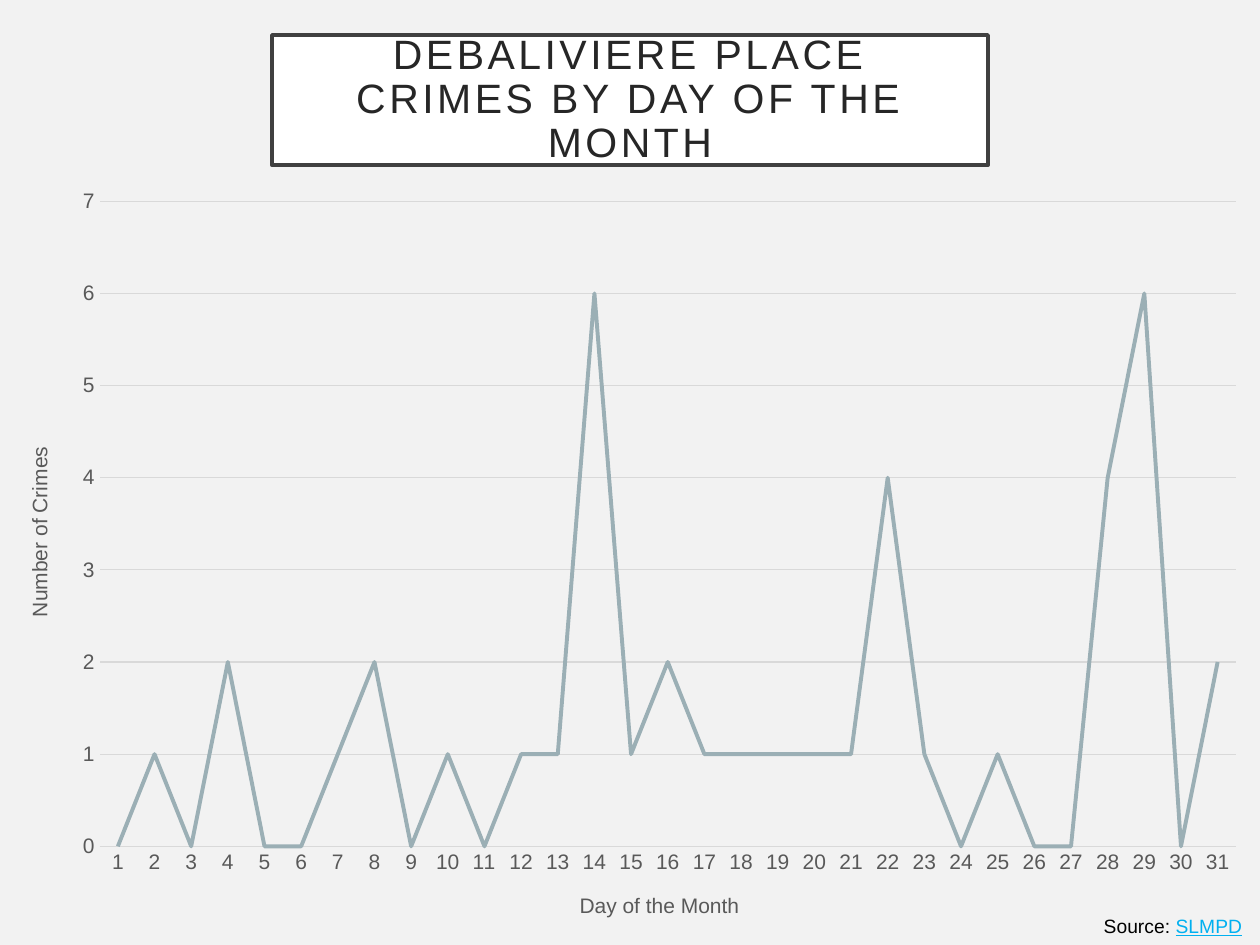
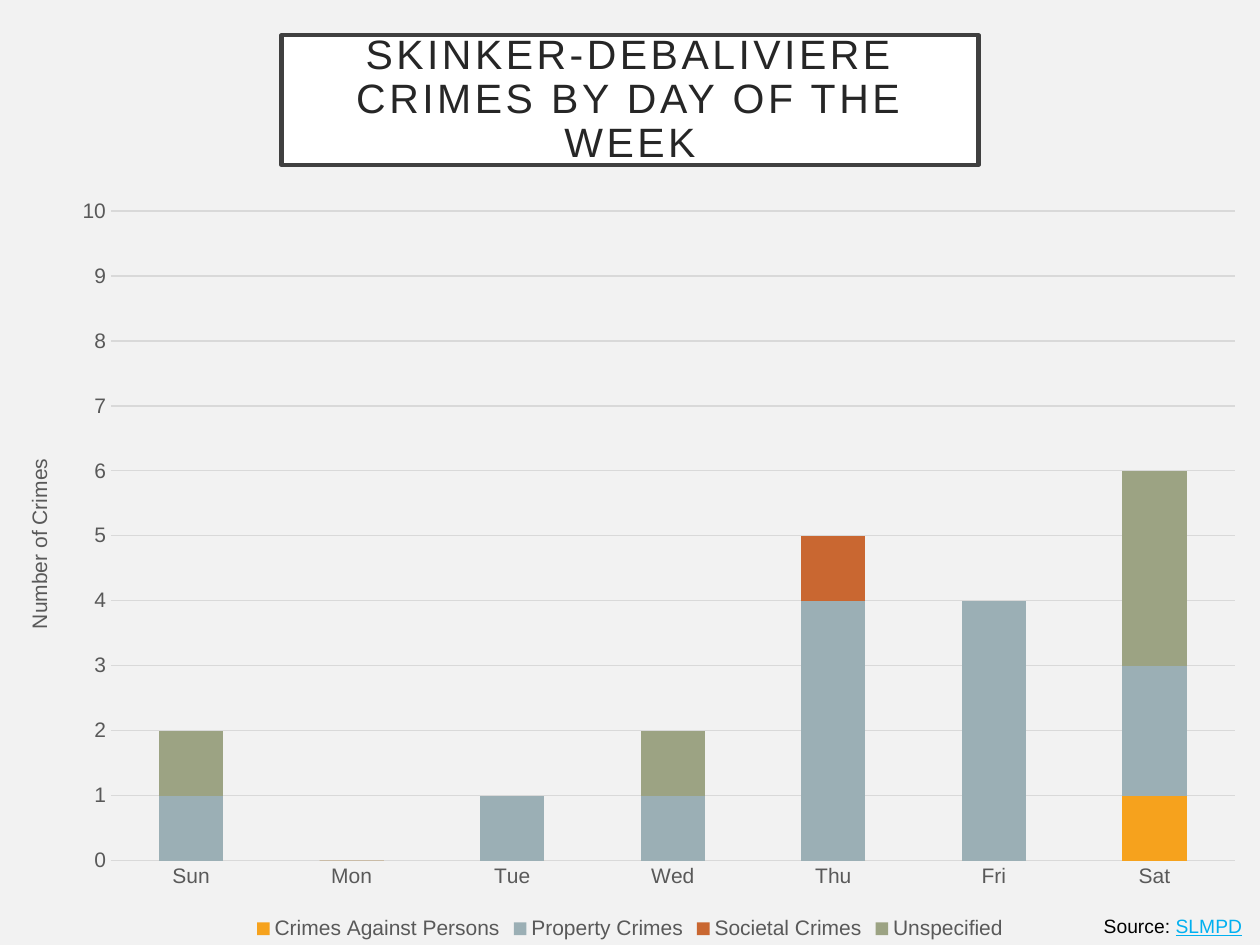
from lxml import etree
from pptx import Presentation
from pptx.chart.data import CategoryChartData
from pptx.dml.color import RGBColor
from pptx.enum.chart import XL_CHART_TYPE as ChartType
from pptx.enum.chart import XL_LEGEND_POSITION as LegendPosition
from pptx.enum.chart import XL_TICK_MARK as TickMark
from pptx.enum.text import MSO_ANCHOR as Anchor
from pptx.enum.text import MSO_AUTO_SIZE as AutoSize
from pptx.enum.text import PP_ALIGN as Align
from pptx.oxml import parse_xml
from pptx.oxml.ns import nsdecls, qn
from pptx.util import Inches, Pt

# Shared style; the grid has 100 columns and 75 rows of a tenth of an inch
COLUMNS, ROWS = 100, 75
CELL = 0.1
FONT = "Arial"
PAPER, WHITE, BLACK = "F2F2F2", "FFFFFF", "000000"
FRAME, HEADING, LABEL = "404040", "262626", "595959"
RULE, LINK = "D9D9D9", "00B0F0"
ORANGE, STEEL, RUST, OLIVE = "F6A21D", "9BAFB5", "C96731", "9CA383"
TITLE_LAYOUT = 5


def grid(cells):
    return Inches(cells * CELL)


def rgb(code):
    return RGBColor.from_string(code)


class CrimeDeck:
    def __init__(self):
        self.deck = Presentation()
        self.deck.slide_width = grid(COLUMNS)
        self.deck.slide_height = grid(ROWS)
        self.slide = None

    def style(self, font, size, color):
        font.name, font.size, font.bold = FONT, Pt(size), False
        font.color.rgb = rgb(color)

    def outline(self, line, color, width):
        line.color.rgb = rgb(color)
        line.width = Pt(width)

    def new_slide(self):
        self.slide = self.deck.slides.add_slide(self.deck.slide_layouts[TITLE_LAYOUT])
        self.slide.background.fill.solid()
        self.slide.background.fill.fore_color.rgb = rgb(PAPER)

    def title(self, place, subject, width):
        heading = self.slide.shapes.title
        heading.left, heading.top = grid((COLUMNS - width) / 2), grid(2.8)
        heading.width, heading.height = grid(width), grid(10.3)
        heading.fill.solid()
        heading.fill.fore_color.rgb = rgb(WHITE)
        self.outline(heading.line, FRAME, 2.5)

        frame = heading.text_frame
        frame.word_wrap, frame.auto_size = True, AutoSize.NONE
        frame.vertical_anchor = Anchor.MIDDLE
        frame.margin_left = frame.margin_right = grid(2)
        frame.margin_top = frame.margin_bottom = grid(2)

        paragraph = frame.paragraphs[0]
        paragraph.alignment, paragraph.line_spacing = Align.CENTER, 0.9
        self.style(paragraph.font, 23.4, HEADING)
        paragraph.add_run().text = place
        paragraph.add_line_break()
        paragraph.add_run().text = subject
        for run in paragraph.runs:
            run.font.size = Pt(23.4)
            run.font._element.set("spc", "200")

    def source(self, name):
        box = self.slide.shapes.add_textbox(grid(86.6), grid(72.1), grid(13), grid(2.9))
        box.text_frame.word_wrap = False
        box.text_frame.auto_size = AutoSize.SHAPE_TO_FIT_TEXT
        paragraph = box.text_frame.paragraphs[0]
        paragraph.alignment = Align.CENTER
        self.style(paragraph.font, 11, BLACK)
        paragraph.add_run().text = "Source: "
        agency = paragraph.add_run()
        agency.text = name
        agency.font.color.rgb = rgb(LINK)
        agency.font.underline = True

    def chart(self, kind, top, categories, series, plot_area):
        data = CategoryChartData()
        data.categories = categories
        for name, values in series.items():
            data.add_series(name, values)
        chart = self.slide.shapes.add_chart(
            kind, 0, grid(top), grid(COLUMNS), grid(ROWS - top), data).chart
        chart.has_title = chart.has_legend = False
        self.style(chart.font, 12, BLACK)
        self.clear_background(chart)
        self.place_plot(chart, plot_area)

        # Axes shared by both charts
        for axis in (chart.category_axis, chart.value_axis):
            axis.major_tick_mark = axis.minor_tick_mark = TickMark.NONE
            self.style(axis.tick_labels.font, 12, LABEL)
        chart.category_axis.has_major_gridlines = False
        self.outline(chart.category_axis.format.line, RULE, 0.75)
        chart.value_axis.format.line.fill.background()
        chart.value_axis.has_major_gridlines = True
        self.outline(chart.value_axis.major_gridlines.format.line, RULE, 0.75)
        self.axis_title(chart.value_axis, "Number of Crimes")
        return chart

    def clear_background(self, chart):
        space = chart._chartSpace
        empty = f'<c:spPr {nsdecls("c", "a")}><a:noFill/><a:ln><a:noFill/></a:ln></c:spPr>'
        space.find(qn("c:txPr")).addprevious(parse_xml(empty))
        space.chart.plotArea.append(parse_xml(empty))

    def place_plot(self, chart, shares):
        area = chart._chartSpace.chart.plotArea
        for old in area.findall(qn("c:layout")):
            area.remove(old)
        layout = etree.Element(qn("c:layout"))
        manual = etree.SubElement(layout, qn("c:manualLayout"))
        settings = [("layoutTarget", "inner"), ("xMode", "edge"), ("yMode", "edge")]
        for tag, value in settings + list(zip("xywh", shares)):
            etree.SubElement(manual, qn(f"c:{tag}")).set("val", str(value))
        area.insert(0, layout)

    def axis_title(self, axis, text):
        axis.has_title = True
        paragraph = axis.axis_title.text_frame.paragraphs[0]
        paragraph.add_run().text = text
        self.style(paragraph.font, 12, LABEL)

    def legend(self, chart):
        chart.has_legend = True
        chart.legend.position = LegendPosition.BOTTOM
        chart.legend.include_in_layout = False
        self.style(chart.legend.font, 12, LABEL)


def month_slide(deck):
    crimes = [0, 1, 0, 2, 0, 0, 1, 2, 0, 1, 0, 1, 1, 6, 1, 2,
              1, 1, 1, 1, 1, 4, 1, 0, 1, 0, 0, 4, 6, 0, 2]
    days = [str(day) for day in range(1, len(crimes) + 1)]
    deck.new_slide()
    deck.title("DEBALIVIERE PLACE", "CRIMES BY DAY OF THE MONTH", 56.8)
    by_day = deck.chart(ChartType.LINE, 13.9, days, {"Series 1": crimes},
                        (0.079, 0.034, 0.902, 0.838))
    deck.axis_title(by_day.category_axis, "Day of the Month")
    trend = by_day.plots[0].series[0]
    trend.smooth = False
    deck.outline(trend.format.line, STEEL, 2.25)
    deck.source("SLMPD")


def week_slide(deck):
    weekdays = ["Sun", "Mon", "Tue", "Wed", "Thu", "Fri", "Sat"]
    crimes = {
        "Crimes Against Persons": [0, 0, 0, 0, 0, 0, 1],
        "Property Crimes": [1, 0, 1, 1, 4, 4, 2],
        "Societal Crimes": [0, 0, 0, 0, 1, 0, 0],
        "Unspecified": [1, 0, 0, 1, 0, 0, 3],
    }
    deck.new_slide()
    deck.title("SKINKER-DEBALIVIERE", "CRIMES BY DAY OF THE WEEK", 55.3)
    by_weekday = deck.chart(ChartType.COLUMN_STACKED, 14.7, weekdays, crimes,
                            (0.088, 0.034, 0.892, 0.855))
    by_weekday.value_axis.maximum_scale = 10
    stacks = by_weekday.plots[0]
    stacks.gap_width, stacks.overlap, stacks.vary_by_categories = 150, 100, False
    for category, color in zip(stacks.series, (ORANGE, STEEL, RUST, OLIVE)):
        category.format.fill.solid()
        category.format.fill.fore_color.rgb = rgb(color)
    deck.legend(by_weekday)
    deck.source("SLMPD")


def main():
    crime_deck = CrimeDeck()
    month_slide(crime_deck)
    week_slide(crime_deck)
    crime_deck.deck.save("out.pptx")


if __name__ == "__main__":
    main()
